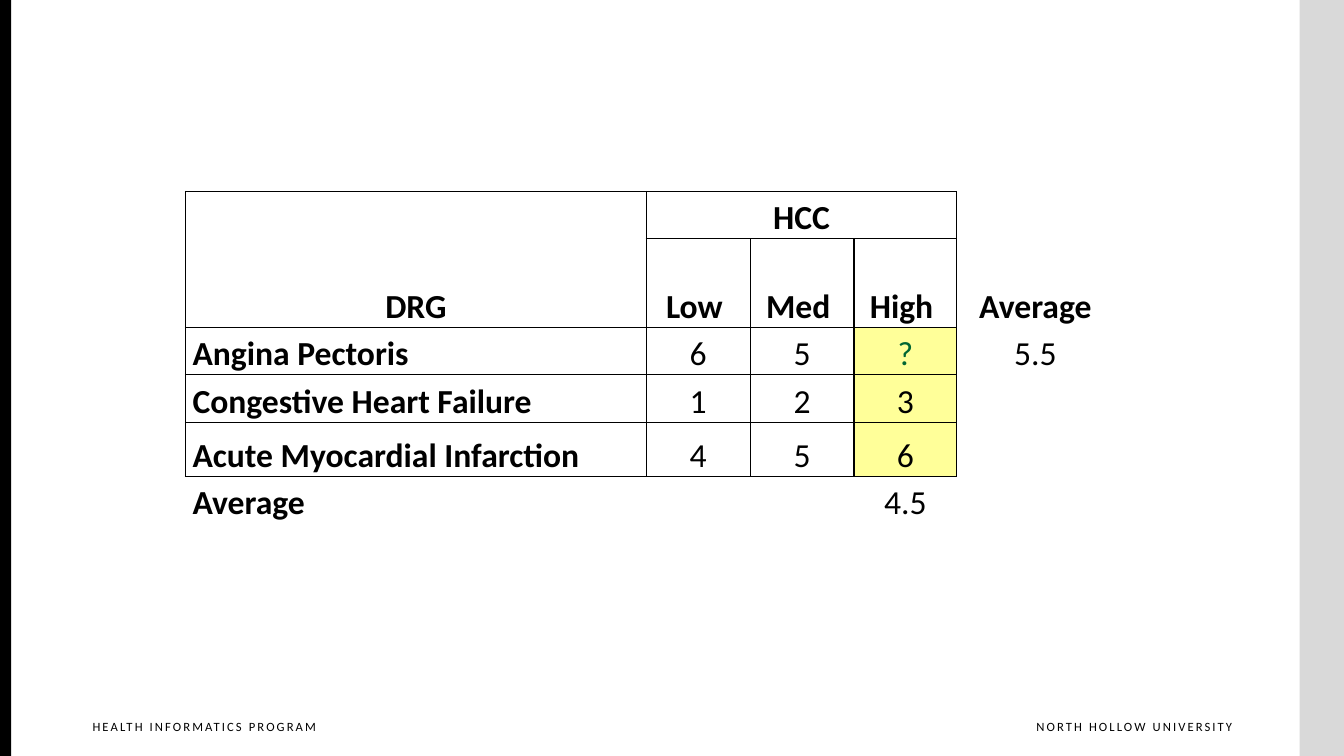
from dataclasses import dataclass
from typing import Any

from lxml.etree import SubElement
from pptx import Presentation
from pptx.dml.color import RGBColor
from pptx.enum.shapes import MSO_SHAPE
from pptx.enum.text import MSO_ANCHOR, PP_ALIGN
from pptx.oxml.ns import qn
from pptx.util import Inches, Pt


@dataclass(frozen=True)
class Theme:
    font: str = "Calibri"
    ink: RGBColor = RGBColor(0x00, 0x00, 0x00)
    side_band: RGBColor = RGBColor(0xD9, 0xD9, 0xD9)
    highlight: RGBColor = RGBColor(0xFF, 0xFF, 0x99)
    unknown: RGBColor = RGBColor(0x00, 0x66, 0x33)
    table_size: Pt = Pt(24)
    footer_size: Pt = Pt(9)
    footer_tracking: int = 150
    rule_width: Pt = Pt(1)


@dataclass(frozen=True)
class Band:
    left: float
    width: float
    color: RGBColor


@dataclass(frozen=True)
class Footer:
    left: float
    width: float
    text: str
    align: PP_ALIGN


THEME = Theme()
SLIDE_WIDTH, SLIDE_HEIGHT = 13.33, 7.5

BANDS = [Band(12.89, 0.44, THEME.side_band), Band(0, 0.11, THEME.ink)]
FOOTERS = [
    Footer(9.87, 2.35, "NORTH HOLLOW UNIVERSITY", PP_ALIGN.RIGHT),
    Footer(0.82, 2.54, "HEALTH INFORMATICS PROGRAM", PP_ALIGN.LEFT),
]

COLUMN_WIDTHS = [4.57, 1.03, 1.03, 1.02, 1.56]
ROW_HEIGHTS = [0.47, 0.88, 0.47, 0.47, 0.54, 0.47]
SCORES = [
    ["DRG", "HCC", "", "", "Average"],
    ["", "Low ", "Med ", "High ", ""],
    ["Angina Pectoris", "6", "5", "?", "5.5"],
    ["Congestive Heart Failure", "1", "2", "3", ""],
    ["Acute Myocardial Infarction", "4", "5", "6", ""],
    ["Average", "", "", "4.5", ""],
]
MERGES = [((0, 0), (1, 0)), ((0, 1), (0, 3)), ((0, 4), (1, 4))]
HEADER_ROWS = 2
HIGH_COLUMN = 3
RULED_ROWS, RULED_COLUMNS = range(5), range(4)
NEIGHBORS = {"lnL": (0, -1), "lnR": (0, 1), "lnT": (-1, 0), "lnB": (1, 0)}

CELL_FORMAT = {
    "margin_left": Inches(0.07),
    "margin_right": Inches(0.07),
    "margin_top": 0,
    "margin_bottom": 0,
    "vertical_anchor": MSO_ANCHOR.BOTTOM,
}
FOOTER_FORMAT = {
    "word_wrap": True,
    "margin_left": Inches(0.1),
    "margin_right": 0,
    "margin_top": Inches(0.05),
    "margin_bottom": Inches(0.05),
}
PLAIN_TABLE = {"first_row": False, "horz_banding": False}


def apply_format(target: Any, values: dict[str, Any]) -> None:
    for name, value in values.items():
        setattr(target, name, value)


def style_font(font: Any, size: Pt, color: RGBColor, bold: bool = False) -> None:
    apply_format(font, {"name": THEME.font, "size": size, "bold": bold})
    font.color.rgb = color


def draw_band(slide: Any, band: Band) -> None:
    bar = slide.shapes.add_shape(
        MSO_SHAPE.RECTANGLE, Inches(band.left), 0, Inches(band.width), Inches(SLIDE_HEIGHT)
    )
    bar.shadow.inherit = False
    bar.fill.solid()
    bar.fill.fore_color.rgb = band.color
    bar.line.fill.background()


def draw_footer(slide: Any, footer: Footer) -> None:
    frame = slide.shapes.add_textbox(
        Inches(footer.left), Inches(7.08), Inches(footer.width), Inches(0.33)
    ).text_frame
    apply_format(frame, FOOTER_FORMAT)
    line = frame.paragraphs[0]
    line.alignment = footer.align
    run = line.add_run()
    run.text = footer.text
    style_font(run.font, THEME.footer_size, THEME.ink)
    run._r.get_or_add_rPr().set("spc", str(THEME.footer_tracking))


def is_ruled(row: int, column: int) -> bool:
    return row in RULED_ROWS and column in RULED_COLUMNS


def draw_borders(cell: Any, row: int, column: int) -> None:
    properties = cell._tc.get_or_add_tcPr()
    for side, (down, across) in NEIGHBORS.items():
        border = SubElement(properties, qn(f"a:{side}"), w=str(THEME.rule_width))
        if is_ruled(row, column) or is_ruled(row + down, column + across):
            ink = SubElement(border, qn("a:solidFill"))
            SubElement(ink, qn("a:srgbClr"), val=str(THEME.ink))
        else:
            SubElement(border, qn("a:noFill"))


def fill_cell(cell: Any, row: int, column: int, text: str) -> None:
    apply_format(cell, CELL_FORMAT)
    draw_borders(cell, row, column)
    is_header = row < HEADER_ROWS
    if column == HIGH_COLUMN and row in RULED_ROWS and not is_header:
        cell.fill.solid()
        cell.fill.fore_color.rgb = THEME.highlight
    else:
        cell.fill.background()
    if not text:
        return
    line = cell.text_frame.paragraphs[0]
    centred = is_header or column > 0
    apply_format(
        line,
        {"alignment": PP_ALIGN.CENTER if centred else PP_ALIGN.LEFT, "line_spacing": 1.07},
    )
    run = line.add_run()
    run.text = text
    color = THEME.unknown if text == "?" else THEME.ink
    style_font(run.font, THEME.table_size, color, is_header or column == 0)


def draw_scores(slide: Any) -> None:
    table = slide.shapes.add_table(
        len(ROW_HEIGHTS), len(COLUMN_WIDTHS), Inches(1.84), Inches(1.9),
        Inches(sum(COLUMN_WIDTHS)), Inches(sum(ROW_HEIGHTS)),
    ).table
    apply_format(table, PLAIN_TABLE)
    for column, width in zip(table.columns, COLUMN_WIDTHS):
        column.width = Inches(width)
    for row, height in zip(table.rows, ROW_HEIGHTS):
        row.height = Inches(height)
    for first, last in MERGES:
        table.cell(*first).merge(table.cell(*last))
    for row, texts in enumerate(SCORES):
        for column, text in enumerate(texts):
            fill_cell(table.cell(row, column), row, column, text)


def main() -> None:
    presentation = Presentation()
    apply_format(
        presentation,
        {"slide_width": Inches(SLIDE_WIDTH), "slide_height": Inches(SLIDE_HEIGHT)},
    )
    slide = presentation.slides.add_slide(presentation.slide_layouts[6])
    for band in BANDS:
        draw_band(slide, band)
    for footer in FOOTERS:
        draw_footer(slide, footer)
    draw_scores(slide)
    presentation.save("out.pptx")


if __name__ == "__main__":
    main()
